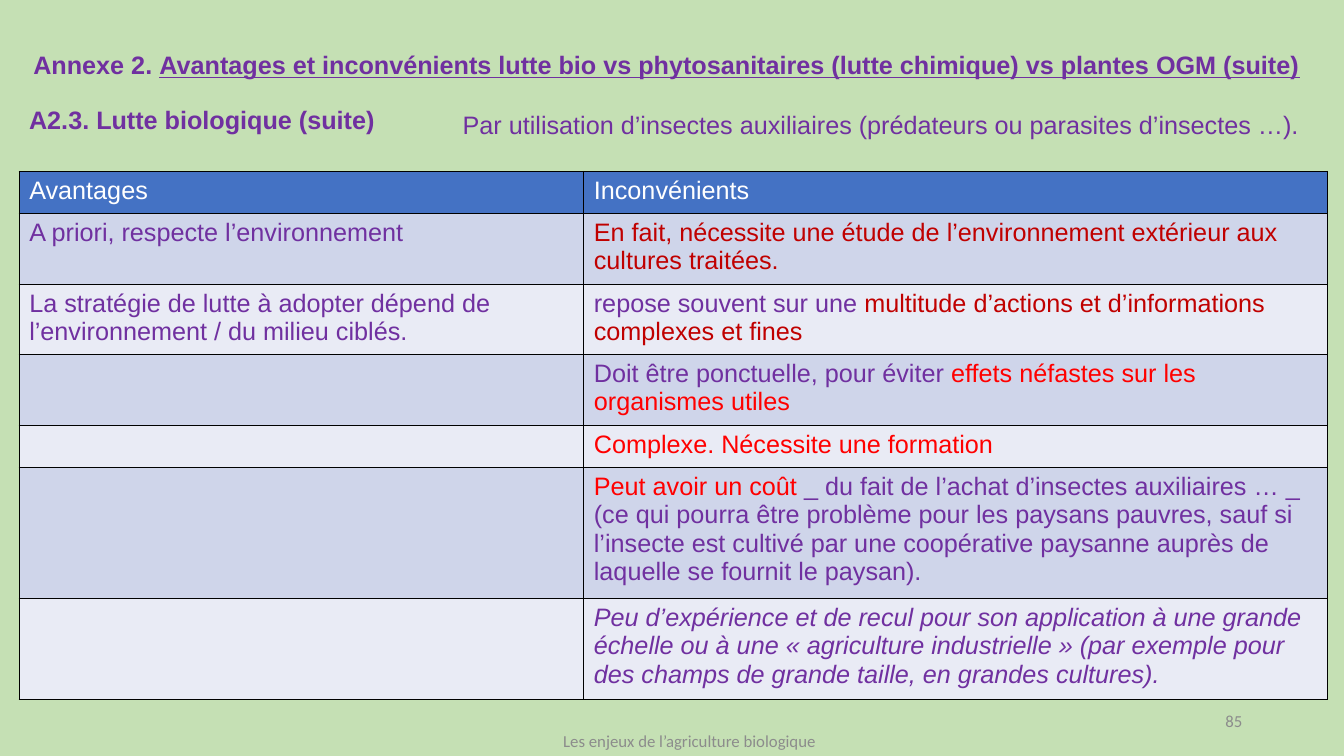
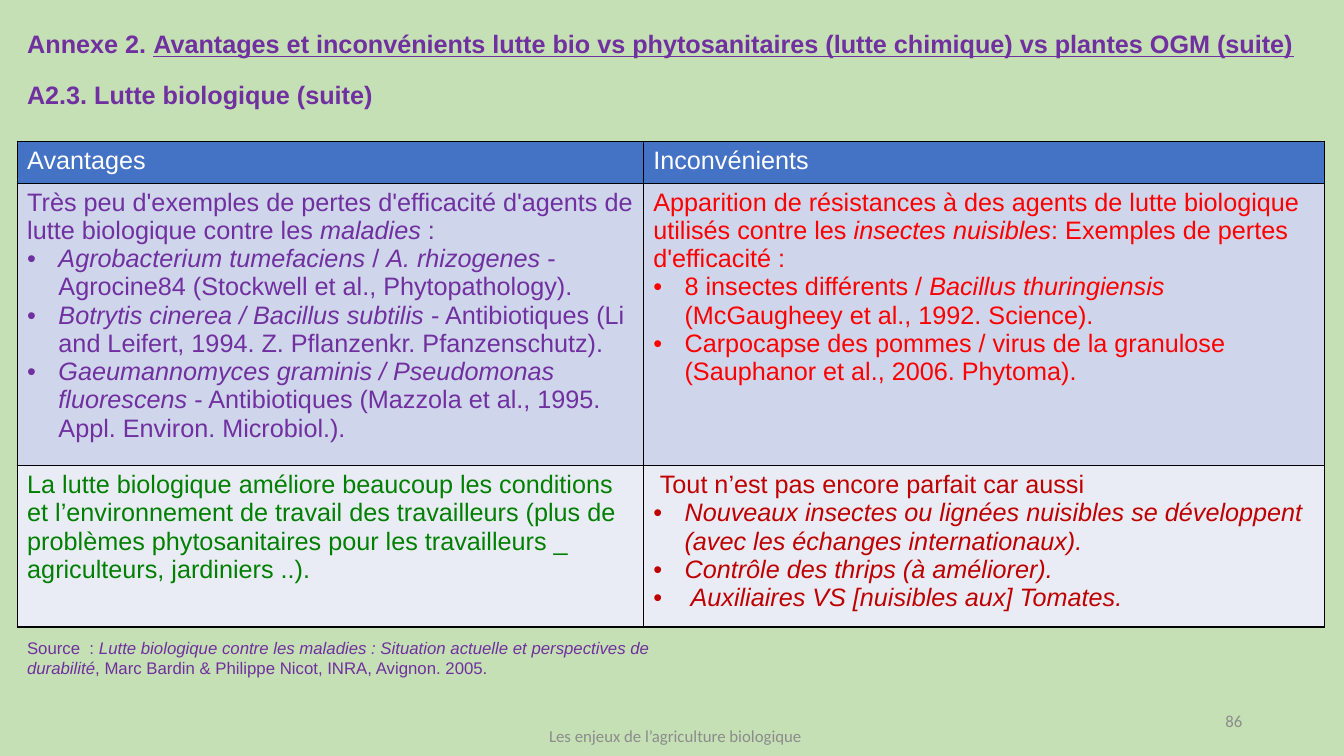
from lxml import etree
from pptx import Presentation
from pptx.dml.color import RGBColor
from pptx.enum import text
from pptx.oxml import ns
from pptx.util import Inches, Pt

GREEN_BG = RGBColor(0xC5, 0xE0, 0xB4)
PURPLE = RGBColor(0x70, 0x30, 0xA0)
DARK_RED = RGBColor(0xC0, 0x00, 0x00)
RED = RGBColor(0xFF, 0x00, 0x00)
GREEN = RGBColor(0x00, 0x80, 0x00)
WHITE = RGBColor(0xFF, 0xFF, 0xFF)
GREY = RGBColor(0x8C, 0x8C, 0x8C)
HEADER = RGBColor(0x44, 0x72, 0xC4)
BANDS = [RGBColor(0xE9, 0xEB, 0xF5), RGBColor(0xCF, 0xD5, 0xEA)]

BULLET = "•"
LEFT = text.PP_ALIGN.LEFT
MIDDLE = text.MSO_ANCHOR.MIDDLE


def write(tf, paragraphs, size=18, font="Arial", align=LEFT):
    for i, runs in enumerate(paragraphs):
        p = tf.paragraphs[0] if i == 0 else tf.add_paragraph()
        p.alignment = align
        if runs[0] == BULLET:
            runs = runs[1:]
            pPr = p._p.get_or_add_pPr()
            pPr.set("marL", str(Inches(0.31)))
            pPr.set("indent", str(-Inches(0.31)))
            etree.SubElement(pPr, ns.qn("a:buFont")).set("typeface", "Arial")
            etree.SubElement(pPr, ns.qn("a:buChar")).set("char", BULLET)
        for words, color, style in runs:
            r = p.add_run()
            r.text = words
            r.font.name = font
            r.font.size = Pt(size)
            r.font.color.rgb = color
            r.font.bold = "b" in style
            r.font.italic = "i" in style
            r.font.underline = "u" in style


def add_text(s, box, paragraphs, anchor=text.MSO_ANCHOR.TOP, **look):
    sp = s.shapes.add_textbox(*[Inches(v) for v in box])
    tf = sp.text_frame
    tf.word_wrap = True
    tf.vertical_anchor = anchor
    write(tf, paragraphs, **look)


TITLE = [[
    ("Annexe 2. ", PURPLE, "b"),
    ("Avantages et inconvénients lutte bio vs phytosanitaires (lutte chimique) "
     "vs plantes OGM (suite)", PURPLE, "bu"),
]]
SUBTITLE = [[("A2.3. Lutte biologique (suite)", PURPLE, "b")]]
FOOTER = [[("Les enjeux de l’agriculture biologique", GREY, "")]]
HEADINGS = ([[("Avantages", WHITE, "")]], [[("Inconvénients", WHITE, "")]])

insect_rows = [
    HEADINGS,
    ([[("A priori, respecte l’environnement", PURPLE, "")]],
     [[("En fait, nécessite une étude de l’environnement extérieur aux cultures "
        "traitées.", DARK_RED, "")]]),
    ([[("La stratégie de lutte à adopter dépend de l’environnement / du milieu "
        "ciblés.", PURPLE, "")]],
     [[("repose souvent sur une ", PURPLE, ""),
       ("multitude d’actions et d’informations complexes et fines", DARK_RED, "")]]),
    ([],
     [[("Doit être ponctuelle, pour éviter ", PURPLE, ""),
       ("effets néfastes sur les organismes utiles", RED, "")]]),
    ([], [[("Complexe. Nécessite une formation", RED, "")]]),
    ([],
     [[("Peut avoir un coût ", RED, ""),
       ("_ du fait de l’achat d’insectes auxiliaires … _ (ce qui pourra être "
        "problème pour les paysans pauvres, sauf si l’insecte est cultivé par une "
        "coopérative paysanne auprès de laquelle se fournit le paysan).", PURPLE, "")]]),
    ([],
     [[("Peu d’expérience et de recul pour son application à une grande échelle ou "
        "à une « agriculture industrielle » (par exemple pour des champs de grande "
        "taille, en grandes cultures).", PURPLE, "i")]]),
]

resistance_rows = [
    HEADINGS,
    ([[("Très peu d'exemples de pertes d'efficacité d'agents de lutte biologique "
        "contre les ", PURPLE, ""), ("maladies", PURPLE, "i"), (" :", PURPLE, "")],
      [BULLET, ("Agrobacterium tumefaciens ", PURPLE, "i"), ("/ ", PURPLE, ""),
       ("A. rhizogenes ", PURPLE, "i"),
       ("- Agrocine84 (Stockwell et al., Phytopathology).", PURPLE, "")],
      [BULLET, ("Botrytis cinerea / Bacillus subtilis ", PURPLE, "i"),
       ("- Antibiotiques (Li and Leifert, 1994. Z. Pflanzenkr. Pfanzenschutz).",
        PURPLE, "")],
      [BULLET, ("Gaeumannomyces graminis / Pseudomonas fluorescens ", PURPLE, "i"),
       ("- Antibiotiques (Mazzola et al., 1995. Appl. Environ. Microbiol.).",
        PURPLE, "")]],
     [[("Apparition de résistances à des agents de lutte biologique utilisés contre "
        "les ", RED, ""), ("insectes nuisibles", RED, "i"),
       (": Exemples de pertes d'efficacité :", RED, "")],
      [BULLET, ("8 insectes différents / ", RED, ""),
       ("Bacillus thuringiensis ", RED, "i"),
       ("(McGaugheey et al., 1992. Science).", RED, "")],
      [BULLET, ("Carpocapse des pommes / virus de la granulose (Sauphanor et al., "
                "2006. Phytoma).", RED, "")]]),
    ([[("La lutte biologique améliore beaucoup les conditions et l’environnement de "
        "travail des travailleurs (plus de problèmes phytosanitaires pour les "
        "travailleurs _ agriculteurs, jardiniers ..).", GREEN, "")]],
     [[(" Tout n’est pas encore parfait car aussi", DARK_RED, "")],
      [BULLET, ("Nouveaux insectes ou lignées nuisibles se développent (avec les "
                "échanges internationaux).", DARK_RED, "i")],
      [BULLET, ("Contrôle des thrips (à améliorer).", DARK_RED, "i")],
      [BULLET, (" Auxiliaires VS [nuisibles aux] Tomates.", DARK_RED, "i")]]),
]

auxiliaries = [[("Par utilisation d’insectes auxiliaires (prédateurs ou parasites "
                 "d’insectes …).", PURPLE, "")]]
source = [[
    ("Source  : ", PURPLE, ""),
    ("Lutte biologique contre les maladies : Situation actuelle et perspectives de "
     "durabilité", PURPLE, "i"),
    (", Marc Bardin & Philippe Nicot, INRA, Avignon. 2005.", PURPLE, ""),
]]

pages = [
    dict(number="85", title=(0.23, 0.44), subtitle=(0.19, 0.99), footer=(4.59, 7.15),
         table=(0.19, 1.7), cols=[5.6, 7.38],
         heights=[0.42, 0.7, 0.7, 0.7, 0.42, 1.3, 1], rows=insect_rows,
         note=auxiliaries, note_box=(4.49, 1.04, 8.67, 0.4),
         note_look=dict(align=text.PP_ALIGN.JUSTIFY)),
    dict(number="86", title=(0.17, 0.23), subtitle=(0.17, 0.74), footer=(4.45, 7.1),
         table=(0.17, 1.4), cols=[6.21, 6.76],
         heights=[0.42, 2.8, 1.6], rows=resistance_rows,
         note=source, note_box=(0.17, 6.28, 6.67, 0.5),
         note_look=dict(size=12)),
]

prs = Presentation()
prs.slide_width = Inches(13.33)
prs.slide_height = Inches(7.5)
bg = prs.slide_master.background.fill
bg.solid()
bg.fore_color.rgb = GREEN_BG

for page in pages:
    s = prs.slides.add_slide(prs.slide_layouts[5])

    sp = s.shapes.title
    sp.left, sp.top, sp.width, sp.height = [
        Inches(v) for v in (*page["title"], 12.88, 0.4)]
    tf = sp.text_frame
    tf.word_wrap = False
    tf.auto_size = text.MSO_AUTO_SIZE.NONE
    tf.vertical_anchor = text.MSO_ANCHOR.TOP
    write(tf, TITLE)

    add_text(s, (*page["subtitle"], 3.8, 0.4), SUBTITLE)
    add_text(s, page["note_box"], page["note"], **page["note_look"])
    add_text(s, (*page["footer"], 4.5, 0.4), FOOTER, MIDDLE,
             size=12, font="Calibri", align=text.PP_ALIGN.CENTER)
    add_text(s, (9.42, 6.95, 3, 0.4), [[(page["number"], GREY, "")]], MIDDLE,
             size=12, font="Calibri", align=text.PP_ALIGN.RIGHT)

    left, top = page["table"]
    tbl = s.shapes.add_table(
        len(page["rows"]), 2, Inches(left), Inches(top),
        Inches(sum(page["cols"])), Inches(sum(page["heights"]))).table
    for col, width in zip(tbl.columns, page["cols"]):
        col.width = Inches(width)
    for i, (height, contents) in enumerate(zip(page["heights"], page["rows"])):
        tbl.rows[i].height = Inches(height)
        for j, paragraphs in enumerate(contents):
            cell = tbl.cell(i, j)
            tcPr = cell._tc.get_or_add_tcPr()
            for side in ("lnL", "lnR", "lnT", "lnB"):
                ln = etree.SubElement(tcPr, ns.qn("a:" + side), w=str(Pt(1)))
                line_fill = etree.SubElement(ln, ns.qn("a:solidFill"))
                etree.SubElement(line_fill, ns.qn("a:srgbClr"), val="000000")
            cell.fill.solid()
            cell.fill.fore_color.rgb = HEADER if i == 0 else BANDS[i % 2]
            write(cell.text_frame, paragraphs)

prs.save("out.pptx")
